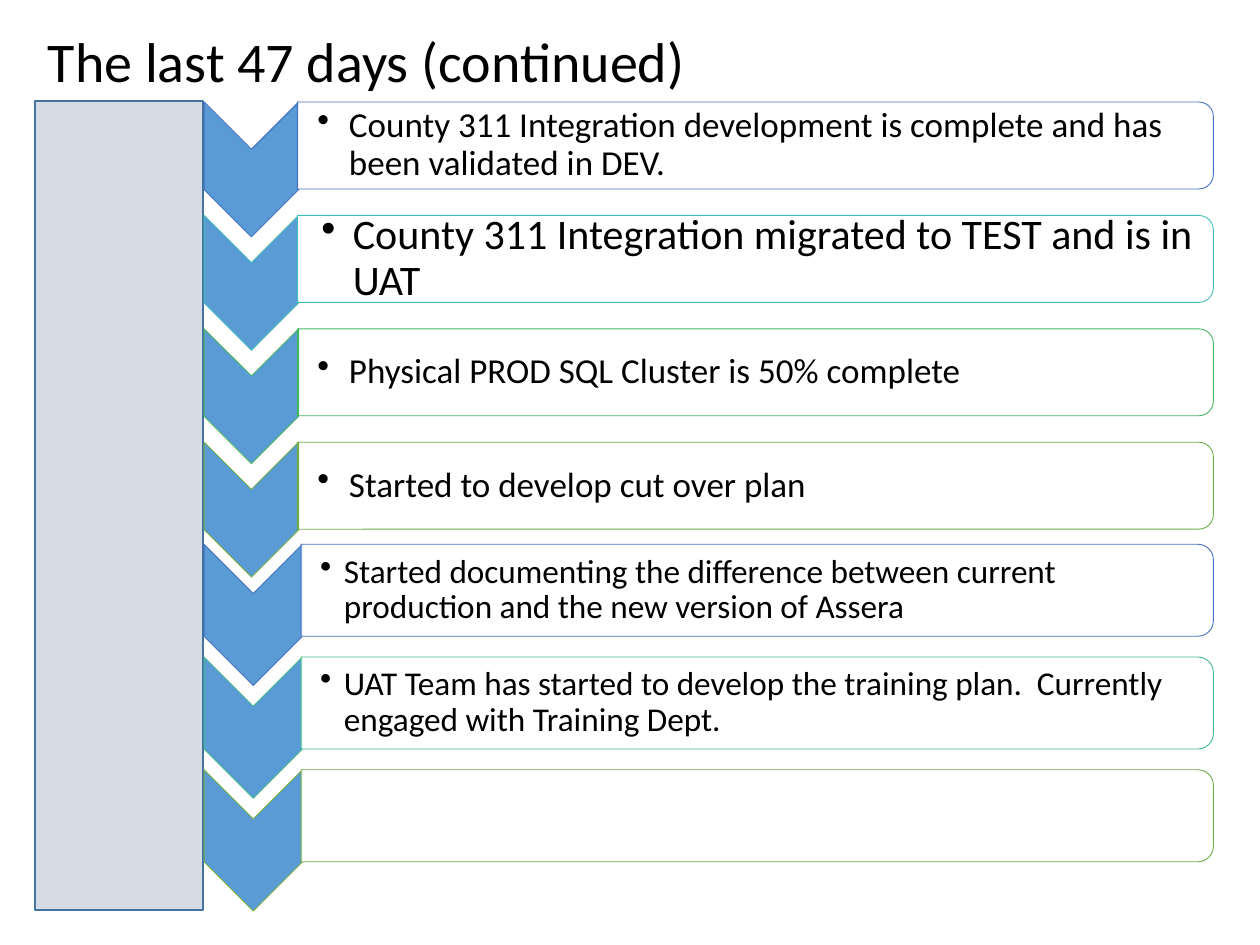
import pptx
import pptx.util
import pptx.dml.color
import pptx.enum.shapes
import pptx.enum.text
import pptx.oxml
import pptx.oxml.ns
import lxml.etree

CELL = 0.1
COLUMNS, ROWS = 100, 75
SHAPE = pptx.enum.shapes.MSO_SHAPE
ANCHOR = pptx.enum.text.MSO_ANCHOR
ALIGN = pptx.enum.text.PP_ALIGN

SECTIONS = [
    {
        "box": (16.2, 8.1, 80.1, 36),
        "pitch": 9, "chevron": (7.5, 10.7), "bar_height": 6.9, "text_height": 6.3,
        "indent": 0.25,
        "steps": [
            ("County 311 Integration development is complete and has been validated in DEV.",
             20, 0.16, "4472C4", True),
            ("County 311 Integration migrated to TEST and is in UAT",
             24, 0.19, "43BEB9", True),
            ("Physical PROD SQL Cluster is 50% complete", 20, 0.16, "45B664", False),
            ("Started to develop cut over plan", 20, 0.16, "70AD47", False),
        ],
    },
    {
        "box": (16.2, 43.2, 80.1, 29),
        "pitch": 8.95, "chevron": (7.8, 11.2), "bar_height": 7.3, "text_height": 6.6,
        "indent": 0.19,
        "steps": [
            ("Started documenting the difference between current production "
             "and the new version of Assera", 19, 0.15, "4472C4", True),
            ("UAT Team has started to develop the training plan.  "
             "Currently engaged with Training Dept.", 19, 0.15, "43BB8D", True),
            ("", 19, 0.15, "70AD47", True),
        ],
    },
]


def color(code):
    return pptx.dml.color.RGBColor.from_string(code)


def cells(*counts):
    return [pptx.util.Inches(count * CELL) for count in counts]


def apply(target, values):
    for name, value in values.items():
        setattr(target, name, value)


def write(box, text, size, frame_values, para_values):
    frame = box.text_frame
    apply(frame, {"word_wrap": True, **frame_values})
    para = frame.paragraphs[0]
    apply(para, para_values)
    span = para.add_run()
    span.text = text
    apply(span.font, {"name": "Calibri", "size": pptx.util.Pt(size)})
    span.font.color.rgb = color("000000")
    return para


def add_bullet(para, indent):
    properties = para._p.get_or_add_pPr()
    width = pptx.util.Inches(indent)
    properties.set("marL", str(width))
    properties.set("indent", str(-width))
    bullet = lxml.etree.SubElement(properties, pptx.oxml.ns.qn("a:buChar"))
    bullet.set("char", "•")


def add_outlined(shapes, kind, box, fill, line, weight):
    shape = shapes.add_shape(kind, *cells(*box))
    shape.shadow.inherit = False
    if fill:
        shape.fill.solid()
        shape.fill.fore_color.rgb = color(fill)
    else:
        shape.fill.background()
    shape.line.color.rgb = color(line)
    shape.line.width = pptx.util.Pt(weight)
    return shape


def add_turned(shapes, kind, box, fill, line):
    left, top, width, height = box
    shift = (width - height) / 2
    shape = add_outlined(shapes, kind, (left + shift, top - shift, height, width),
                         fill, line, 0.5)
    shape.rotation = 90
    return shape


def make_translucent(shape, percent):
    fill_color = shape._element.spPr.find(".//" + pptx.oxml.ns.qn("a:srgbClr"))
    alpha = lxml.etree.SubElement(fill_color, pptx.oxml.ns.qn("a:alpha"))
    alpha.set("val", str(percent * 1000))


def build_title(page, box):
    title = page.shapes.title
    apply(title, dict(zip(("left", "top", "width", "height"), cells(*box))))
    write(title, "The last 47 days (continued)", 32,
          {"vertical_anchor": ANCHOR.TOP, "auto_size": pptx.enum.text.MSO_AUTO_SIZE.NONE},
          {"alignment": ALIGN.LEFT})


def build_panel(page, box):
    add_outlined(page.shapes, SHAPE.RECTANGLE, box, "D6DCE5", "43739E", 1)


def build_section(page, section):
    left, top, width, height = section["box"]
    chevron_width, chevron_height = section["chevron"]
    bar_height, text_height = section["bar_height"], section["text_height"]
    bar_left = left + chevron_width - 0.1
    bar_width = left + width - bar_left
    shapes = page.shapes.add_group_shape().shapes
    for index, (text, size, inset, line, filled) in enumerate(section["steps"]):
        step_top = top + index * section["pitch"]
        add_turned(shapes, SHAPE.CHEVRON,
                   (left, step_top, chevron_width, chevron_height), "5B9BD5", line)
        bar = add_turned(shapes, SHAPE.ROUND_2_SAME_RECTANGLE,
                         (bar_left, step_top, bar_width, bar_height),
                         "FFFFFF" if filled else None, line)
        if filled:
            make_translucent(bar, 90)
        if text:
            label_top = step_top + (bar_height - text_height) / 2
            label = shapes.add_textbox(
                *cells(bar_left, label_top, bar_width - 0.4, text_height))
            margin = pptx.util.Inches(0.01)
            para = write(label, text, size,
                         {"vertical_anchor": ANCHOR.MIDDLE,
                          "margin_left": pptx.util.Inches(inset), "margin_right": margin,
                          "margin_top": margin, "margin_bottom": margin},
                         {"level": 1, "line_spacing": 0.9, "alignment": ALIGN.LEFT})
            add_bullet(para, section["indent"])


def main():
    deck = pptx.Presentation()
    deck.slide_width, deck.slide_height = cells(COLUMNS, ROWS)
    page = deck.slides.add_slide(deck.slide_layouts[5])
    build_title(page, (2.8, 1.6, 92.1, 6.4))
    build_panel(page, (2.8, 8, 13.3, 64.2))
    for section in SECTIONS:
        build_section(page, section)
    deck.save("out.pptx")


if __name__ == "__main__":
    main()
